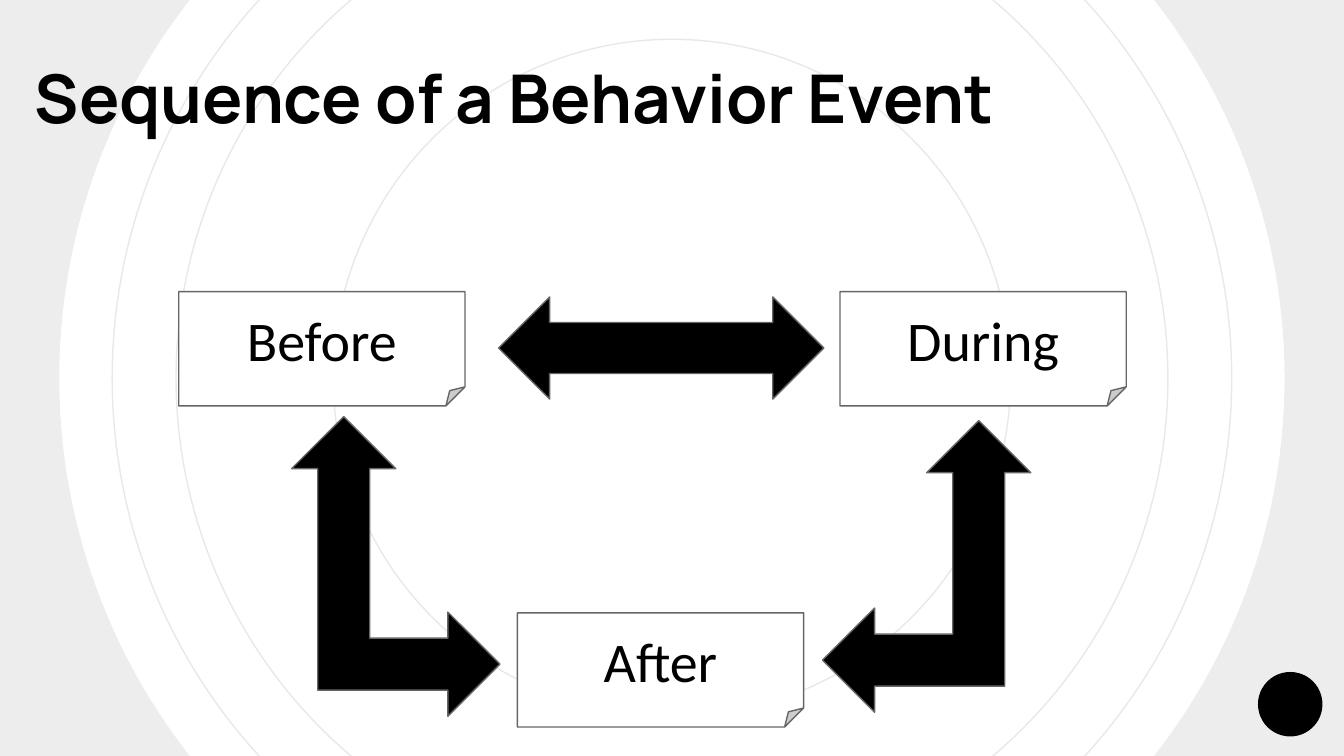
from lxml.etree import SubElement
from pptx import Presentation
from pptx.dml.color import RGBColor
from pptx.enum.shapes import MSO_SHAPE
from pptx.enum.text import MSO_ANCHOR, MSO_AUTO_SIZE, PP_ALIGN
from pptx.oxml.ns import qn
from pptx.util import Inches, Pt

BLACK, WHITE, GRAY, PALE = "000000", "FFFFFF", "666666", "E8E8E8"
WIDTH = 10
HEIGHT = WIDTH * 9 / 16

TITLE = "Sequence of a Behavior Event"
RINGS = [8.33, 7.38, 5.04]  # diameters, all centred on the slide
DONUT = 11.54
CARD_W, CARD_H = 2.13, 0.85
CARDS = [("Before", 1.33, 2.17), ("During", 6.25, 2.17), ("After", 3.85, 4.56)]
ARROWS = [  # shape, left, top, width, height, mirrored
    (MSO_SHAPE.LEFT_UP_ARROW, 6.12, 3.13, 1.55, 2.17, False),
    (MSO_SHAPE.LEFT_UP_ARROW, 2.17, 3.1, 1.55, 2.23, True),
    (MSO_SHAPE.LEFT_RIGHT_ARROW, 3.71, 2.21, 2.42, 0.76, False),
]


def color(hex_code):
    return RGBColor.from_string(hex_code)


def add_shape(kind, x, y, w, h, fill=None, line=None):
    sp = slide.shapes.add_shape(kind, Inches(x), Inches(y), Inches(w), Inches(h))
    sp.shadow.inherit = False
    if fill:
        sp.fill.solid()
        sp.fill.fore_color.rgb = color(fill)
    else:
        sp.fill.background()
    if line:
        sp.line.color.rgb = color(line)
        sp.line.width = Pt(0.75)
    else:
        sp.line.fill.background()
    return sp


def add_centered(kind, diameter, **style):
    return add_shape(kind, (WIDTH - diameter) / 2, (HEIGHT - diameter) / 2,
                     diameter, diameter, **style)


def set_text(sp, text, size, font, bold=False, align=PP_ALIGN.LEFT,
             anchor=MSO_ANCHOR.MIDDLE):
    tf = sp.text_frame
    tf.word_wrap = True
    tf.auto_size = MSO_AUTO_SIZE.NONE
    tf.vertical_anchor = anchor
    tf.margin_left = tf.margin_right = Inches(0.1)
    tf.margin_top = tf.margin_bottom = Inches(0.1)
    p = tf.paragraphs[0]
    p.alignment = align
    r = p.add_run()
    r.text = text
    r.font.size = Pt(size)
    r.font.name = font
    r.font.bold = bold
    r.font.color.rgb = color(BLACK)


prs = Presentation()
prs.slide_width, prs.slide_height = Inches(WIDTH), Inches(HEIGHT)
slide = prs.slides.add_slide(prs.slide_layouts[5])
slide.background.fill.solid()
slide.background.fill.fore_color.rgb = color(WHITE)

# Backdrop
for diameter in RINGS:
    add_centered(MSO_SHAPE.OVAL, diameter, line=PALE)
donut = add_centered(MSO_SHAPE.DONUT, DONUT, fill=BLACK)
donut.adjustments[0] = 0.105
fill_color = donut._element.spPr.find(qn("a:solidFill"))[0]
SubElement(fill_color, qn("a:alpha")).set("val", "7000")
add_shape(MSO_SHAPE.OVAL, 9.36, 5, 0.48, 0.48, fill=BLACK)

# Title, raised above the backdrop
title = slide.shapes.title
title.left, title.top = Inches(0.16), Inches(0.08)
title.width, title.height = Inches(9.32), Inches(1.04)
set_text(title, TITLE, 36, "Manrope", bold=True, anchor=MSO_ANCHOR.BOTTOM)
slide.shapes._spTree.append(title._element)

# Cycle of cards and arrows
for label, x, y in CARDS:
    card = add_shape(MSO_SHAPE.FOLDED_CORNER, x, y, CARD_W, CARD_H, WHITE, GRAY)
    set_text(card, label, 30, "Calibri", align=PP_ALIGN.CENTER)
for kind, x, y, w, h, mirrored in ARROWS:
    arrow = add_shape(kind, x, y, w, h, BLACK, GRAY)
    if mirrored:
        arrow._element.spPr.find(qn("a:xfrm")).set("flipH", "1")

prs.save("out.pptx")
